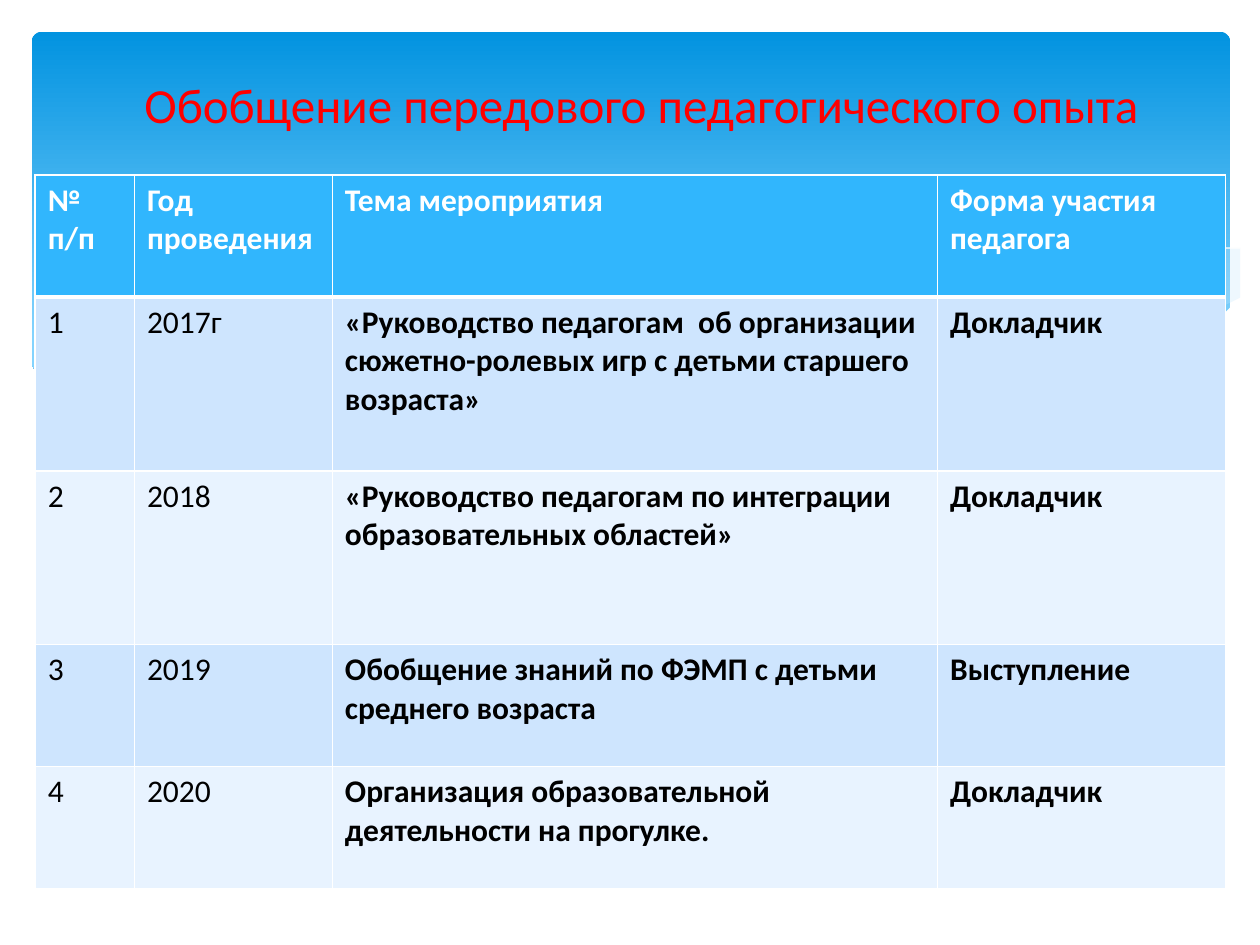
from typing import NamedTuple, Optional

from lxml.etree import SubElement
from pptx import Presentation
from pptx.dml.color import RGBColor
from pptx.enum.shapes import MSO_SHAPE as Preset
from pptx.enum.text import MSO_ANCHOR as Anchor, PP_ALIGN as Align
from pptx.oxml import parse_xml
from pptx.oxml.ns import nsdecls, qn
from pptx.util import Cm, Pt

WHITE = RGBColor(0xFF, 0xFF, 0xFF)
BLACK = RGBColor(0x00, 0x00, 0x00)
RED = RGBColor(0xFF, 0x00, 0x00)
SKY_TOP = RGBColor(0x02, 0x93, 0xE0)
SKY_BOTTOM = RGBColor(0x83, 0xD3, 0xFE)
MIST = RGBColor(0xC6, 0xE7, 0xFC)
HEADER_BLUE = RGBColor(0x31, 0xB6, 0xFD)
BANDS = (RGBColor(0xCE, 0xE5, 0xFE), RGBColor(0xE8, 0xF3, 0xFF))


class Wave(NamedTuple):
    points: tuple
    fill: Optional[RGBColor] = None
    opacity: int = 100


class Event(NamedTuple):
    number: str
    year: str
    topic: str
    role: str


WAVES = (
    Wave(((24.78, 5.08), (23.01, 5.41), (21.87, 5.66), (19.13, 6.3), (16.79, 6.73),
          (18.59, 6.96), (20.4, 7.06), (22.15, 6.96), (23.39, 6.73), (24.78, 6.27)),
         MIST, 29),
    Wave(((22.68, 6.93), (20.5, 6.6), (17.93, 6.1), (15.98, 5.64), (13.74, 5.16),
          (11.23, 4.8), (9.17, 4.7), (7.26, 4.85), (9.19, 5.16), (11.4, 5.64),
          (14.38, 6.3), (16.89, 6.76), (19, 7.01), (20.78, 7.06)),
         MIST, 40),
    Wave(((7.85, 4.95), (10.19, 4.75), (12.95, 4.88), (15.44, 5.18), (18.47, 5.74),
          (21.11, 6.38), (23.04, 6.91))),
    Wave(((15.57, 6.53), (19, 5.66), (22, 5.05), (23.47, 4.83), (24.77, 4.7))),
    Wave(((24.82, 6.25), (23.62, 6.65), (22.23, 6.93), (20.55, 7.04), (17.98, 6.86),
          (15.32, 6.45), (11.35, 5.59), (8.64, 5), (6.35, 4.72), (4.5, 4.67),
          (2.69, 4.8), (1.5, 5.05), (0.58, 5.41), (0.58, 8.36), (24.82, 8.36)),
         WHITE),
)

EVENTS = (
    Event("№\nп/п", "Год проведения", "Тема мероприятия", "Форма участия педагога"),
    Event("1", "2017г", "«Руководство педагогам  об организации сюжетно-ролевых игр "
          "с детьми старшего возраста»", "Докладчик"),
    Event("2", "2018", "«Руководство педагогам по интеграции образовательных областей»",
          "Докладчик"),
    Event("3", "2019", "Обобщение знаний по ФЭМП с детьми среднего возраста",
          "Выступление"),
    Event("4", "2020", "Организация образовательной деятельности на прогулке.",
          "Докладчик"),
)
COLUMN_WIDTHS = (2, 3.99, 12.2, 5.8)
ROW_HEIGHTS = (2.46, 3.5, 3.5, 2.46, 2.46)


def write(frame, text: str, *, size: float = 18, color: RGBColor = BLACK,
          bold: bool = False, align: Align = Align.LEFT) -> None:
    frame.word_wrap = True
    frame.text = text
    for paragraph in frame.paragraphs:
        paragraph.alignment = align
        for run in paragraph.runs:
            run.font.name = "Calibri"
            run.font.size = Pt(size)
            run.font.bold = bold
            run.font.color.rgb = color


def draw_sky(shapes) -> None:
    sky = shapes.add_shape(Preset.ROUNDED_RECTANGLE, Cm(0.64), Cm(0.64), Cm(24.16), Cm(6.86))
    sky.adjustments[0] = 0.03
    sky.shadow.inherit = False
    sky.line.fill.background()
    sky.fill.gradient()
    sky.fill.gradient_angle = 270
    for stop, position, color in zip(sky.fill.gradient_stops, (0, 0.9), (SKY_TOP, SKY_BOTTOM)):
        stop.position = position
        stop.color.rgb = color


def draw_wave(shapes, wave: Wave) -> None:
    builder = shapes.build_freeform(*wave.points[0], scale=Cm(1))
    builder.add_line_segments(wave.points[1:], close=wave.fill is not None)
    outline = builder.convert_to_shape()
    outline.shadow.inherit = False
    if wave.fill is None:
        outline.fill.background()
        outline.line.color.rgb = WHITE
        outline.line.width = Pt(0)
        return
    outline.line.fill.background()
    outline.fill.solid()
    outline.fill.fore_color.rgb = wave.fill
    if wave.opacity < 100:
        tint = outline.fill._xPr.find(qn("a:solidFill"))[0]
        SubElement(tint, qn("a:alpha")).set("val", str(wave.opacity * 1000))


def set_borders(cell, *, top: float = 1, bottom: float = 1) -> None:
    properties = cell._tc.get_or_add_tcPr()
    widths = {"lnL": 1, "lnR": 1, "lnT": top, "lnB": bottom}
    for index, (side, width) in enumerate(widths.items()):
        properties.insert(index, parse_xml(
            f'<a:{side} {nsdecls("a")} w="{Pt(width)}"><a:solidFill>'
            f'<a:srgbClr val="{WHITE}"/></a:solidFill></a:{side}>'))


def draw_events(shapes) -> None:
    table = shapes.add_table(len(EVENTS), len(COLUMN_WIDTHS), Cm(0.71), Cm(3.53),
                             Cm(sum(COLUMN_WIDTHS)), Cm(sum(ROW_HEIGHTS))).table
    for column, width in zip(table.columns, COLUMN_WIDTHS):
        column.width = Cm(width)
    for row, height in zip(table.rows, ROW_HEIGHTS):
        row.height = Cm(height)
    for r, event in enumerate(EVENTS):
        heading = r == 0
        for c, text in enumerate(event):
            cell = table.cell(r, c)
            write(cell.text_frame, text, color=WHITE if heading else BLACK,
                  bold=heading or c >= 2)
            cell.fill.solid()
            cell.fill.fore_color.rgb = HEADER_BLUE if heading else BANDS[(r - 1) % 2]
            set_borders(cell, top=3 if r == 1 else 1, bottom=3 if heading else 1)


def main() -> None:
    deck = Presentation()
    deck.slide_width, deck.slide_height = Cm(25.4), Cm(19.05)
    shapes = deck.slides.add_slide(deck.slide_layouts[6]).shapes
    draw_sky(shapes)
    for wave in WAVES:
        draw_wave(shapes, wave)
    draw_events(shapes)
    title = shapes.add_textbox(Cm(1.5), Cm(0.91), Cm(22.86), Cm(2.39)).text_frame
    title.vertical_anchor = Anchor.MIDDLE
    write(title, "Обобщение передового педагогического опыта",
          size=28, color=RED, align=Align.CENTER)
    deck.save("out.pptx")


if __name__ == "__main__":
    main()
